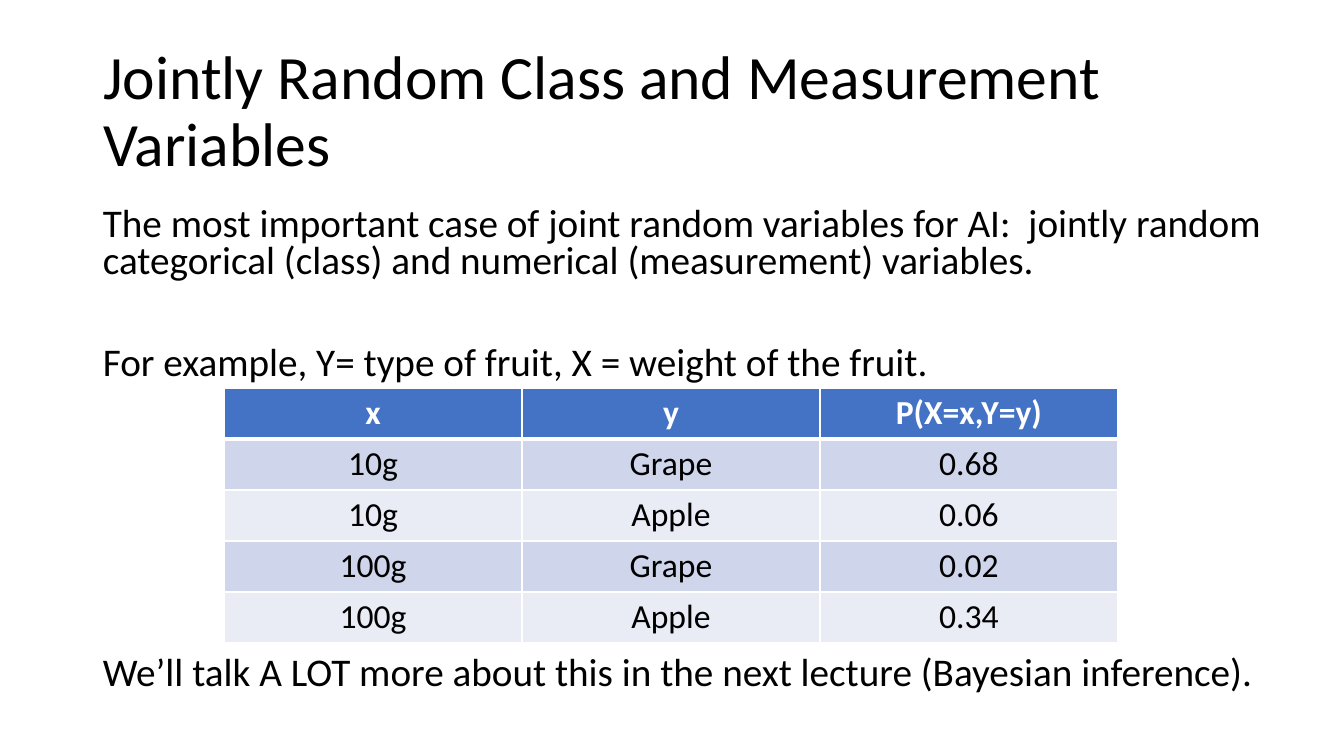
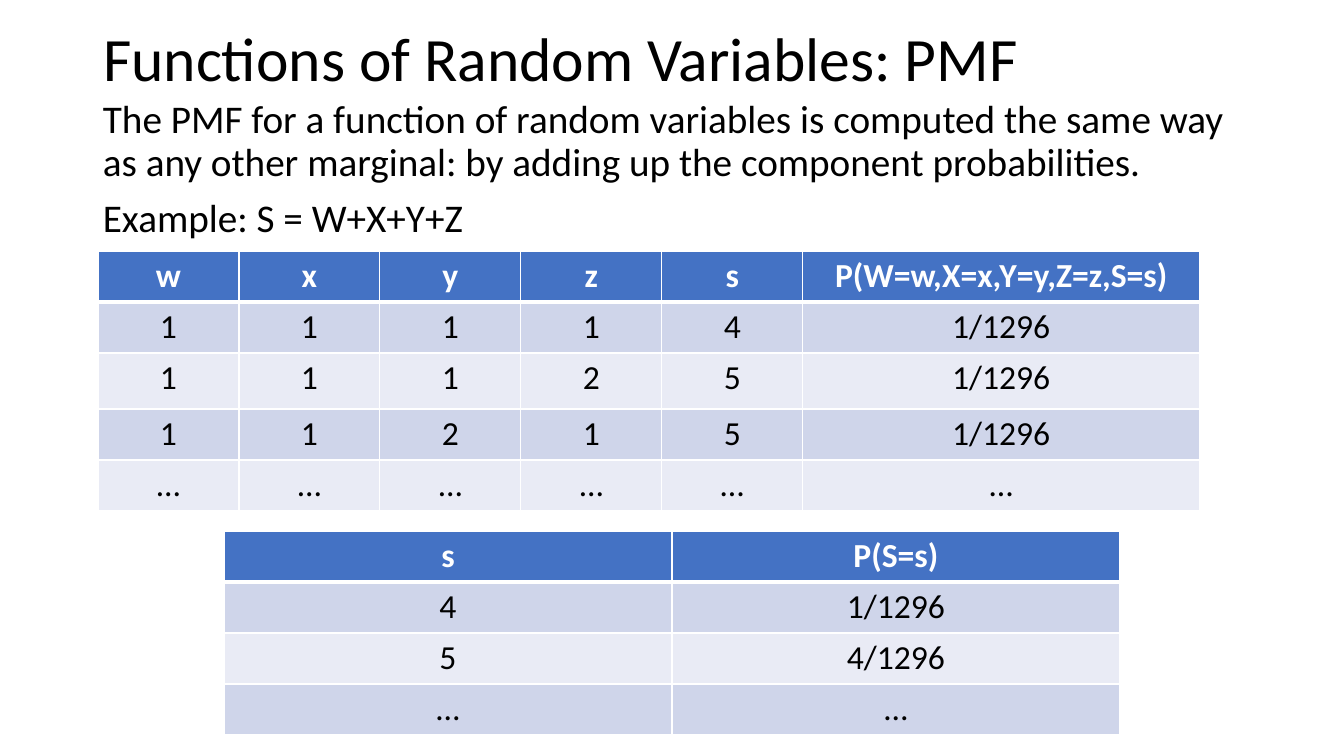
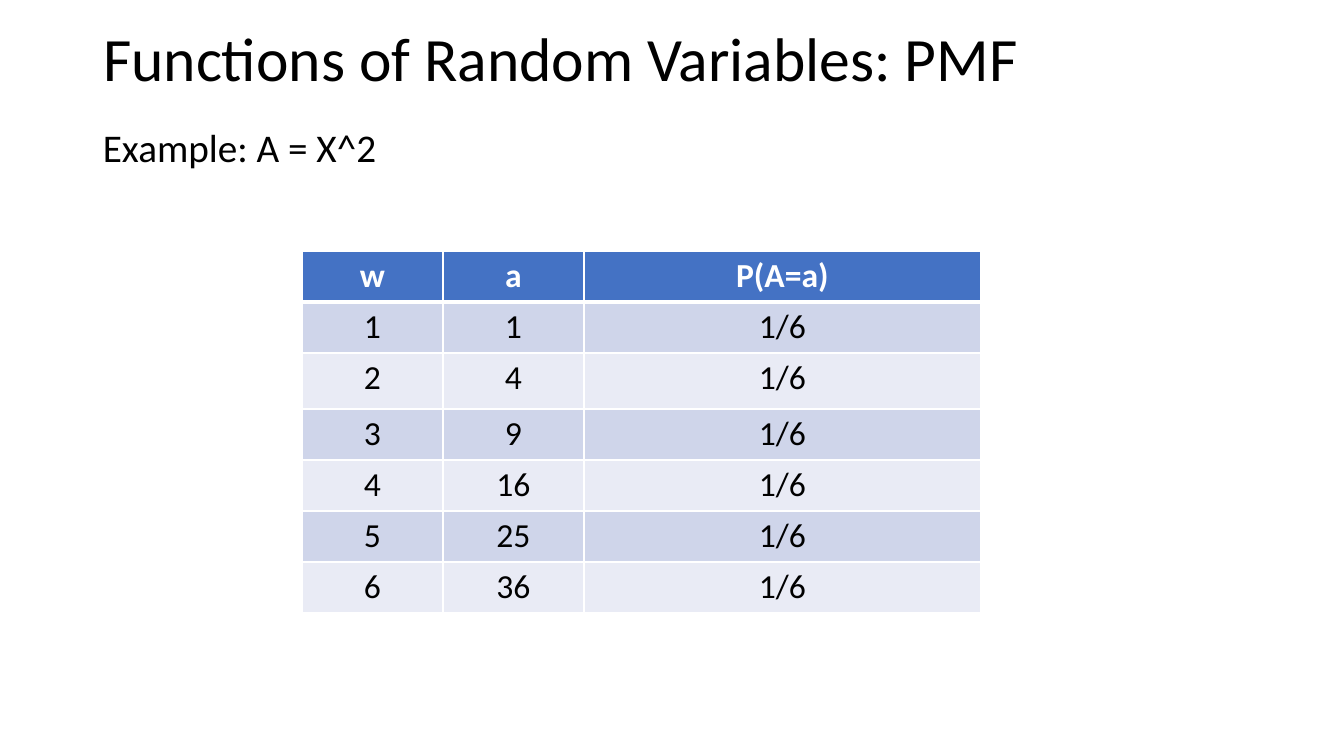
import pptx
import pptx.util
import pptx.dml.color
import pptx.enum.text
import lxml.etree

PX = 914400 / 100.8
FONT = "Calibri"
COLORS = {"text": "000000", "white": "FFFFFF", "header": "4472C4",
          "odd": "CFD5EA", "even": "E9EBF5"}
LEFT, WIDTH = 93, 1159
ROW, TALL_ROW = 51, 56
NS = "http://schemas.openxmlformats.org/drawingml/2006/main"

# Slide content: boxes are (left, top, width, height);
# paragraphs are (space before in pt, text)
SLIDES = [
    {"title": "Jointly Random Class and Measurement Variables",
     "title_box": (LEFT, 40, WIDTH, 146),
     "body_box": (LEFT, 202, 1232, 537), "spacing": 0.8,
     "body": [
         (10, "The most important case of joint random variables for AI:  jointly random "
              "categorical (class) and numerical (measurement) variables."),
         (46, "For example, Y= type of fruit, X = weight of the fruit."),
         (194, "We’ll talk A LOT more about this in the next lecture (Bayesian inference).")],
     "tables": [
         {"at": (224, 388), "cols": [298] * 3, "tall": None,
          "rows": [["x", "y", "P(X=x,Y=y)"],
                   ["10g", "Grape", "0.68"],
                   ["10g", "Apple", "0.06"],
                   ["100g", "Grape", "0.02"],
                   ["100g", "Apple", "0.34"]]}]},
    {"title": "Functions of Random Variables: PMF",
     "title_box": (LEFT, 13, WIDTH, 98),
     "body_box": (LEFT, 95, WIDTH, 587), "spacing": 0.9,
     "body": [
         (10, "The PMF for a function of random variables is computed the same way "
              "as any other marginal: by adding up the component probabilities."),
         (10, "Example: S = W+X+Y+Z")],
     "tables": [
         {"at": (98, 251), "cols": [141] * 5 + [397], "tall": 2,
          "rows": [["w", "x", "y", "z", "s", "P(W=w,X=x,Y=y,Z=z,S=s)"],
                   ["1", "1", "1", "1", "4", "1/1296"],
                   ["1", "1", "1", "2", "5", "1/1296"],
                   ["1", "1", "2", "1", "5", "1/1296"],
                   ["…"] * 6]},
         {"at": (224, 531), "cols": [448] * 2, "tall": None,
          "rows": [["s", "P(S=s)"],
                   ["4", "1/1296"],
                   ["5", "4/1296"],
                   ["…"] * 2]}]},
    {"title": "Functions of Random Variables: PMF",
     "title_box": (LEFT, 13, WIDTH, 98),
     "body_box": (LEFT, 124, WIDTH, 587), "spacing": 0.9,
     "body": [(10, "Example: A = X^2")],
     "tables": [
         {"at": (302, 251), "cols": [141, 141, 397], "tall": 2,
          "rows": [["w", "a", "P(A=a)"]]
                  + [[str(w), str(w * w), "1/6"] for w in range(1, 7)]}]},
]


def emu(*lengths):
    return [pptx.util.Emu(round(n * PX)) for n in lengths]


def add_run(p, text, size, color="text", bold=False):
    r = p.add_run()
    r.text = text
    r.font.name = FONT
    r.font.size = pptx.util.Pt(size)
    r.font.bold = bold
    r.font.color.rgb = pptx.dml.color.RGBColor.from_string(COLORS[color])


prs = pptx.Presentation()
prs.slide_width, prs.slide_height = emu(1344, 756)

for data in SLIDES:
    s = prs.slides.add_slide(prs.slide_layouts[5])

    # Title
    title = s.shapes.title
    title.left, title.top, title.width, title.height = emu(*data["title_box"])
    tf = title.text_frame
    tf.word_wrap = True
    tf.auto_size = pptx.enum.text.MSO_AUTO_SIZE.NONE
    tf.vertical_anchor = pptx.enum.text.MSO_ANCHOR.MIDDLE
    p = tf.paragraphs[0]
    p.alignment = pptx.enum.text.PP_ALIGN.LEFT
    p.line_spacing = 0.9
    add_run(p, data["title"], 44)

    # Body text
    tf = s.shapes.add_textbox(*emu(*data["body_box"])).text_frame
    tf.word_wrap = True
    for i, (before, text) in enumerate(data["body"]):
        p = tf.add_paragraph() if i else tf.paragraphs[0]
        p.line_spacing = data["spacing"]
        p.space_before = pptx.util.Pt(before)
        add_run(p, text, 28)

    # Tables
    for spec_table in data["tables"]:
        rows, cols = spec_table["rows"], spec_table["cols"]
        heights = [TALL_ROW if i == spec_table["tall"] else ROW for i in range(len(rows))]
        table = s.shapes.add_table(len(rows), len(cols), *emu(
            *spec_table["at"], sum(cols), sum(heights))).table
        for column, width in zip(table.columns, emu(*cols)):
            column.width = width
        for i, (row, height) in enumerate(zip(table.rows, emu(*heights))):
            row.height = height
            fill = "header" if i == 0 else "odd" if i % 2 else "even"
            for cell, text in zip(row.cells, rows[i]):
                cell.fill.solid()
                cell.fill.fore_color.rgb = pptx.dml.color.RGBColor.from_string(COLORS[fill])
                p = cell.text_frame.paragraphs[0]
                p.alignment = pptx.enum.text.PP_ALIGN.CENTER
                add_run(p, text, 24, "text" if i else "white", bold=i == 0)

                # White borders, thick under the header
                tcPr = cell._tc.get_or_add_tcPr()
                for n, side in enumerate(("lnL", "lnR", "lnT", "lnB")):
                    thick = (i, side) in ((0, "lnB"), (1, "lnT"))
                    ln = lxml.etree.Element(f"{{{NS}}}{side}", w=str(38100 if thick else 12700))
                    solid = lxml.etree.SubElement(ln, f"{{{NS}}}solidFill")
                    lxml.etree.SubElement(solid, f"{{{NS}}}srgbClr", val=COLORS["white"])
                    tcPr.insert(n, ln)

prs.save("out.pptx")
